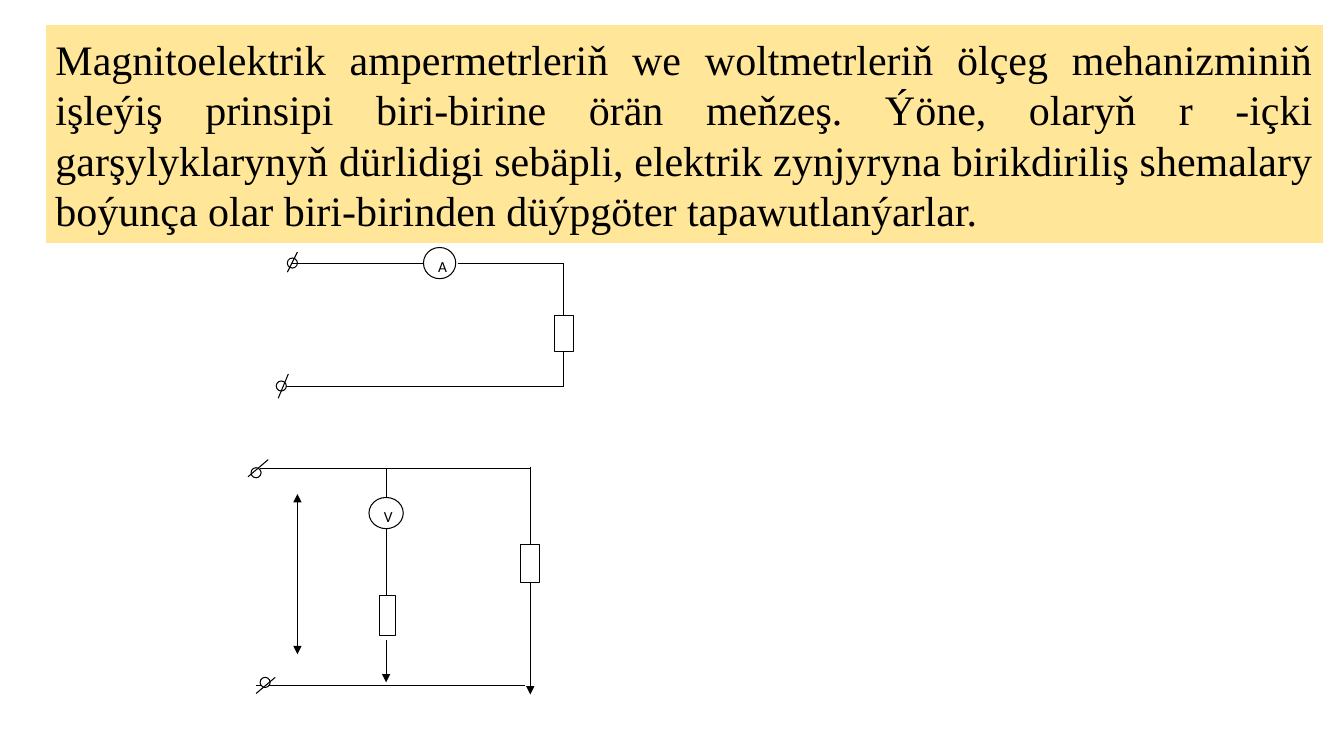
"""Build a slide comparing ammeter and voltmeter connection circuits."""

from dataclasses import dataclass

from lxml import etree
from pptx import Presentation
from pptx.dml.color import RGBColor
from pptx.enum.shapes import MSO_CONNECTOR, MSO_SHAPE
from pptx.enum.text import MSO_ANCHOR, MSO_AUTO_SIZE, PP_ALIGN
from pptx.oxml.ns import qn
from pptx.util import Inches, Length, Pt

STRAIGHT = MSO_CONNECTOR.STRAIGHT
CIRCLE = MSO_SHAPE.FLOWCHART_CONNECTOR
RECTANGLE = MSO_SHAPE.RECTANGLE
TOP, MIDDLE = MSO_ANCHOR.TOP, MSO_ANCHOR.MIDDLE
LEFT, JUSTIFY = PP_ALIGN.LEFT, PP_ALIGN.JUSTIFY
NO_AUTOFIT = MSO_AUTO_SIZE.NONE

COLORS = {"ink": "000000", "paper": "FFFFFF", "banner": "FFE699"}
GRID_CELL = 0.1
LINE_WIDTH = Pt(0.75)
TITLE_ONLY_LAYOUT = 5
TITLE_FONT = {"name": "Times New Roman", "size": Pt(30), "bold": False}
LABEL_FONT = {"name": "Calibri", "size": Pt(11)}
TITLE_FRAME = {"word_wrap": True, "auto_size": NO_AUTOFIT, "vertical_anchor": MIDDLE}
LABEL_FRAME = {"word_wrap": True, "vertical_anchor": TOP}
TITLE_TEXT = (
    "Magnitoelektrik ampermetrleriň we woltmetrleriň ölçeg mehanizminiň işleýiş "
    "prinsipi biri-birine örän meňzeş. Ýöne, olaryň r -içki garşylyklarynyň "
    "dürlidigi sebäpli, elektrik zynjyryna birikdiriliş shemalary boýunça olar "
    "biri-birinden düýpgöter tapawutlanýarlar."
)


@dataclass(frozen=True)
class Wire:
    """A straight wire between two grid points, with optional arrowheads."""

    start: tuple[float, float]
    end: tuple[float, float]
    arrows: tuple[str, ...] = ()


@dataclass(frozen=True)
class Part:
    """A circuit part centred on a grid point."""

    center: tuple[float, float]
    size: tuple[float, float]
    kind: MSO_SHAPE
    label: str = ""


TERMINAL = (1, 1)
SERIES_TOP, SERIES_BOTTOM, SERIES_LOAD = 26.1, 38.3, 55.9
PARALLEL_TOP, PARALLEL_BOTTOM = 46.5, 68
VOLTMETER_BRANCH, LOAD_BRANCH = 38.3, 52.6

WIRES = (
    Wire((45.4, SERIES_TOP), (SERIES_LOAD, SERIES_TOP)),
    Wire((SERIES_LOAD, SERIES_TOP), (SERIES_LOAD, 31.3)),
    Wire((SERIES_LOAD, 34.8), (SERIES_LOAD, SERIES_BOTTOM)),
    Wire((SERIES_LOAD, SERIES_BOTTOM), (28.2, SERIES_BOTTOM)),
    Wire((25.8, PARALLEL_TOP), (LOAD_BRANCH, PARALLEL_TOP)),
    Wire((52.1, PARALLEL_BOTTOM), (25.4, PARALLEL_BOTTOM)),
    Wire((VOLTMETER_BRANCH, PARALLEL_TOP), (VOLTMETER_BRANCH, 62.3)),
    Wire((VOLTMETER_BRANCH, 63.5), (VOLTMETER_BRANCH, 67.7), ("tailEnd",)),
    Wire((LOAD_BRANCH, 46.3), (LOAD_BRANCH, 54)),
    Wire((LOAD_BRANCH, 57.8), (LOAD_BRANCH, 65.2)),
    Wire((LOAD_BRANCH, 63.5), (LOAD_BRANCH, 68.9), ("tailEnd",)),
    Wire((29.5, 49), (29.5, 64.9), ("headEnd", "tailEnd")),
)
PARTS = (
    Part((29, SERIES_TOP), TERMINAL, CIRCLE),
    Part((27.9, SERIES_BOTTOM), TERMINAL, CIRCLE),
    Part((25.4, 46.9), TERMINAL, CIRCLE),
    Part((26.3, 67.7), TERMINAL, CIRCLE),
    Part((43.6, SERIES_TOP), (3.2, 3.1), CIRCLE, "A"),
    Part((VOLTMETER_BRANCH, 50.9), (3.4, 3.1), CIRCLE, "V"),
    Part((SERIES_LOAD, 33.1), (1.9, 3.6), RECTANGLE),
    Part((LOAD_BRANCH, 55.9), (1.9, 3.8), RECTANGLE),
    Part((38.4, 61.1), (1.6, 4), RECTANGLE),
)
TERMINAL_WIRES = (
    Wire((29, SERIES_TOP), (42, SERIES_TOP)),
    Wire((29.5, 25), (28.5, 27)),
    Wire((28.6, 37.1), (27.6, 39.5)),
    Wire((26.6, 45.6), (24.6, 47.3)),
    Wire((27.3, 67.2), (25.4, 68.8)),
)


def cells(count: float) -> Length:
    """Convert grid cells to a length."""
    return Inches(count * GRID_CELL)


def color(name: str) -> RGBColor:
    """Look up a named colour."""
    return RGBColor.from_string(COLORS[name])


def paint(shape, fill: str, line: str) -> None:
    """Fill and outline a shape."""
    shape.fill.solid()
    shape.fill.fore_color.rgb = color(fill)
    shape.line.color.rgb = color(line)
    shape.line.width = LINE_WIDTH


def write(shape, text: str, frame_format: dict, font_format: dict, alignment) -> None:
    """Put one formatted paragraph in a shape."""
    frame = shape.text_frame
    for name, value in frame_format.items():
        setattr(frame, name, value)
    paragraph = frame.paragraphs[0]
    paragraph.alignment = alignment
    paragraph.line_spacing = 1.0
    run = paragraph.add_run()
    run.text = text
    for name, value in font_format.items():
        setattr(run.font, name, value)
    run.font.color.rgb = color("ink")


def draw_title(slide) -> None:
    """Format the title placeholder as the banner."""
    title = slide.shapes.title
    bounds = {"left": 4.5, "top": 2.4, "width": 126.8, "height": 21.8}
    for name, value in bounds.items():
        setattr(title, name, cells(value))
    paint(title, "banner", "paper")
    write(title, TITLE_TEXT, TITLE_FRAME, TITLE_FONT, JUSTIFY)


def draw_wire(slide, wire: Wire) -> None:
    """Draw a wire and its arrowheads."""
    points = (cells(value) for value in wire.start + wire.end)
    connector = slide.shapes.add_connector(STRAIGHT, *points)
    connector.line.color.rgb = color("ink")
    connector.line.width = LINE_WIDTH
    line = connector.line._get_or_add_ln()
    for arrow in wire.arrows:
        etree.SubElement(line, qn(f"a:{arrow}"), type="triangle")
    etree.SubElement(connector._element.spPr, qn("a:effectLst"))


def draw_part(slide, part: Part) -> None:
    """Draw a terminal, meter or resistor."""
    corner = (middle - size / 2 for middle, size in zip(part.center, part.size))
    bounds = (cells(value) for value in (*corner, *part.size))
    shape = slide.shapes.add_shape(part.kind, *bounds)
    shape.shadow.inherit = False
    paint(shape, "paper", "ink")
    if part.label:
        write(shape, part.label, LABEL_FRAME, LABEL_FONT, LEFT)


def main() -> None:
    """Create and save the presentation."""
    presentation = Presentation()
    presentation.slide_width = Inches(13.33)
    presentation.slide_height = Inches(7.5)
    layout = presentation.slide_layouts[TITLE_ONLY_LAYOUT]
    slide = presentation.slides.add_slide(layout)
    draw_title(slide)
    for wire in WIRES:
        draw_wire(slide, wire)
    for part in PARTS:
        draw_part(slide, part)
    for wire in TERMINAL_WIRES:
        draw_wire(slide, wire)
    presentation.save("out.pptx")


if __name__ == "__main__":
    main()
